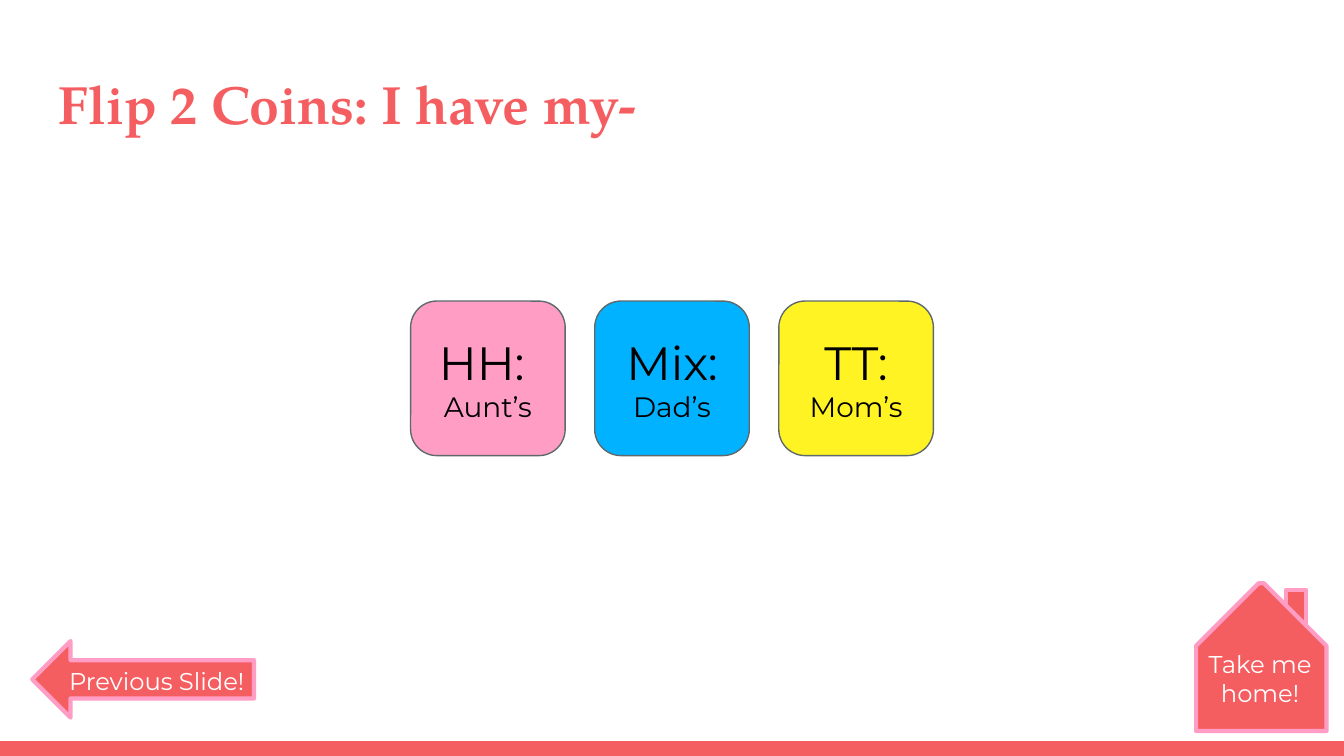
from pptx import Presentation
from pptx.dml.color import RGBColor
from pptx.enum.shapes import MSO_SHAPE
from pptx.enum.text import MSO_ANCHOR, PP_ALIGN
from pptx.util import Inches, Pt

WIDTH = 10
HEIGHT = WIDTH * 9 / 16
CORAL, PINK, GREY, WHITE, BLACK = "F55E61", "FF9DC5", "5E696C", "FFFFFF", "000000"
TITLE = "Flip 2 Coins: I have my-"
OUTCOMES = [
    ("HH: ", "Aunt’s", PINK),
    ("Mix:", "Dad’s", "00B2FF"),
    ("TT:", "Mom’s", "FFF324"),
]
CARD_SIZE, CARD_STEP, CARD_TOP = 1.15, 1.37, 2.24
BAR_HEIGHT = 0.11

# Navigation shapes: preset, place, adjustments
BUTTON_SHAPES = [
    (MSO_SHAPE.RECTANGLE, (9.57, 4.39, 0.15, 0.4), ()),
    (MSO_SHAPE.SNIP_2_SAME_RECTANGLE, (8.9, 4.34, 0.97, 1.1), (0.48, 0)),
    (MSO_SHAPE.LEFT_ARROW, (0.24, 4.77, 1.65, 0.57), (0.5, 0.5)),
]
BUTTON_LABELS = [
    ("Take me home!", (8.89, 4.73, 0.97, 0.68)),
    ("Previous Slide!", (0.34, 4.86, 1.65, 0.31)),
]


def color(value):
    return RGBColor.from_string(value)


def add_shape(page, preset, place, fill, line=None, line_width=0.75, adjustments=()):
    shape = page.shapes.add_shape(preset, *map(Inches, place))
    shape.shadow.inherit = False
    shape.fill.solid()
    shape.fill.fore_color.rgb = color(fill)
    if line:
        shape.line.color.rgb = color(line)
        shape.line.width = Pt(line_width)
    else:
        shape.line.fill.background()
    for index, value in enumerate(adjustments):
        shape.adjustments[index] = value
    return shape


def write(box, lines, font="Montserrat", ink=BLACK, bold=False,
          align=PP_ALIGN.CENTER, anchor=MSO_ANCHOR.TOP):
    """Fill a box with one paragraph for each (text, size) pair."""
    frame = box.text_frame
    frame.word_wrap = True
    frame.vertical_anchor = anchor
    frame.margin_left = frame.margin_right = Inches(0.1)
    frame.margin_top = frame.margin_bottom = Inches(0.1)
    for index, (text, size) in enumerate(lines):
        para = frame.paragraphs[0] if index == 0 else frame.add_paragraph()
        para.alignment = align
        span = para.add_run()
        span.text = text
        span.font.name = font
        span.font.size = Pt(size)
        span.font.bold = bold
        span.font.color.rgb = color(ink)


def add_text(page, place, text, size, **style):
    write(page.shapes.add_textbox(*map(Inches, place)), [(text, size)], **style)


deck = Presentation()
deck.slide_width, deck.slide_height = Inches(WIDTH), Inches(HEIGHT)
page = deck.slides.add_slide(deck.slide_layouts[6])

add_shape(page, MSO_SHAPE.RECTANGLE,
          (0, HEIGHT - BAR_HEIGHT, WIDTH, BAR_HEIGHT), CORAL)
add_text(page, (0.34, 0.43, 9.32, 0.68), TITLE, 28.8,
         font="TeX Gyre Pagella", ink=CORAL, bold=True, align=PP_ALIGN.LEFT)

row_width = CARD_STEP * (len(OUTCOMES) - 1) + CARD_SIZE
first_left = (WIDTH - row_width) / 2
for column, (flip, owner, fill) in enumerate(OUTCOMES):
    place = (first_left + column * CARD_STEP, CARD_TOP, CARD_SIZE, CARD_SIZE)
    card = add_shape(page, MSO_SHAPE.ROUNDED_RECTANGLE, place, fill, GREY,
                     adjustments=(0.17,))
    write(card, [(flip, 25), (owner, 15)], anchor=MSO_ANCHOR.MIDDLE)

for preset, place, adjustments in BUTTON_SHAPES:
    add_shape(page, preset, place, CORAL, PINK, 2.25, adjustments)
for text, place in BUTTON_LABELS:
    add_text(page, place, text, 13, ink=WHITE)

deck.save("out.pptx")
